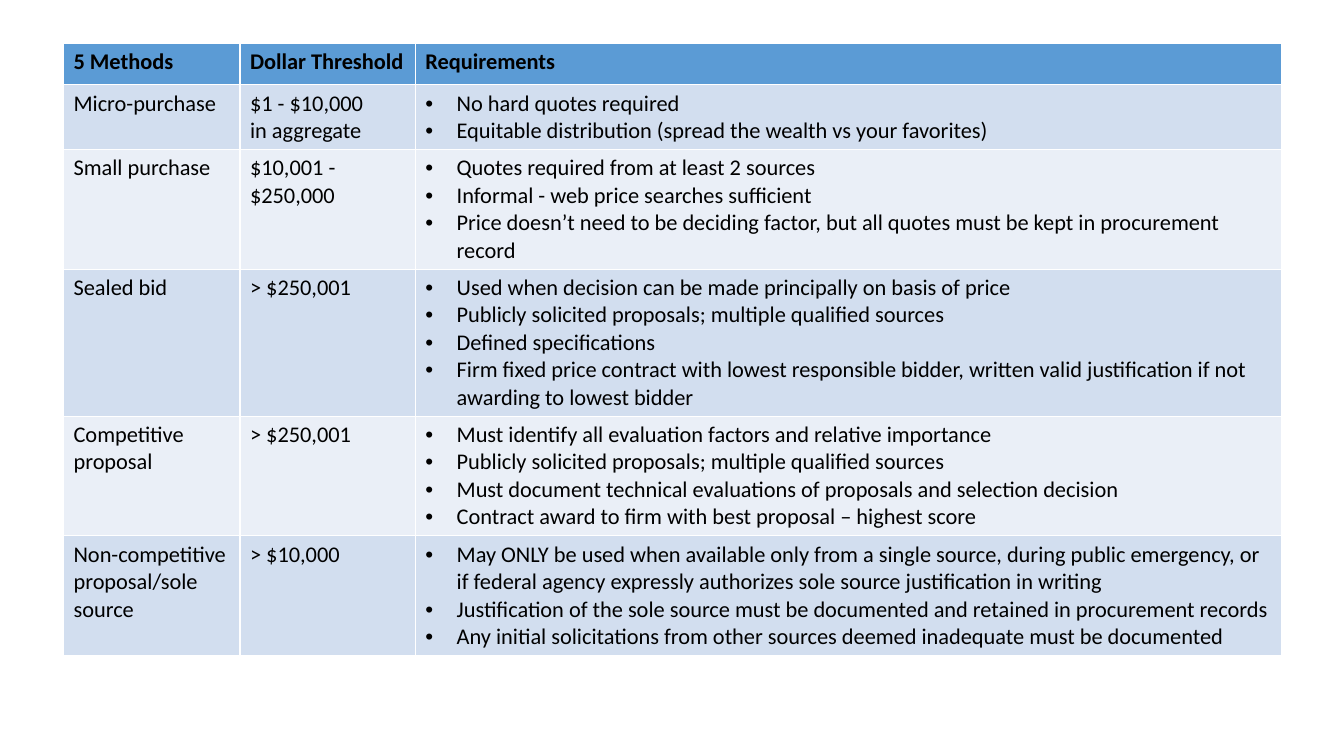
import pptx
import pptx.dml.color
import pptx.oxml
import pptx.util
from lxml import etree

Inches = pptx.util.Inches
RGB = pptx.dml.color.RGBColor

BLUE = RGB(0x5B, 0x9B, 0xD5)
BANDS = RGB(0xD2, 0xDE, 0xEF), RGB(0xEA, 0xEF, 0xF7)
BLACK = RGB(0, 0, 0)

WIDE, HIGH = 13.33, 7.5
LEFT, TOP = 0.63, 0.43
COLS = 1.75, 1.74, 8.59
HEAD = 0.41
LINE, PAD = 0.27, 0.1
HANG = Inches(0.31)

TITLES = "5 Methods", "Dollar Threshold", "Requirements"
METHODS = [
    ("Micro-purchase", ["$1 - $10,000", "in aggregate"], 2, [
        "No hard quotes required",
        "Equitable distribution (spread the wealth vs your favorites)",
    ]),
    ("Small purchase", ["$10,001 -$250,000"], 4, [
        "Quotes required from at least 2 sources",
        "Informal - web price searches sufficient",
        "Price doesn’t need to be deciding factor, but all quotes must be kept "
        "in procurement record",
    ]),
    ("Sealed bid", ["> $250,001"], 5, [
        "Used when decision can be made principally on basis of price",
        "Publicly solicited proposals; multiple qualified sources",
        "Defined specifications",
        "Firm fixed price contract with lowest responsible bidder, written valid "
        "justification if not awarding to lowest bidder",
    ]),
    ("Competitive proposal", ["> $250,001"], 4, [
        "Must identify all evaluation factors and relative importance",
        "Publicly solicited proposals; multiple qualified sources",
        "Must document technical evaluations of proposals and selection decision",
        "Contract award to firm with best proposal – highest score",
    ]),
    ("Non-competitive proposal/sole source", ["> $10,000"], 4, [
        "May ONLY be used when available only from a single source, during public "
        "emergency, or if federal agency expressly authorizes sole source "
        "justification in writing",
        "Justification of the sole source must be documented and retained in "
        "procurement records",
        "Any initial solicitations from other sources deemed inadequate must be "
        "documented",
    ]),
]


def add_dot(para):
    """Give a paragraph a hanging round bullet."""
    props = para._p.get_or_add_pPr()
    props.set("marL", str(HANG))
    props.set("indent", str(-HANG))
    font = etree.SubElement(props, pptx.oxml.ns.qn("a:buFont"))
    font.set("typeface", "Arial")
    dot = etree.SubElement(props, pptx.oxml.ns.qn("a:buChar"))
    dot.set("char", "•")


def fill_cell(cell, lines, fill, bold=False, dots=False):
    """Write one paragraph per line into a coloured cell."""
    cell.fill.solid()
    cell.fill.fore_color.rgb = fill
    cell.text = "\n".join(lines)
    for para in cell.text_frame.paragraphs:
        para.font.name = "Calibri"
        para.font.size = pptx.util.Pt(16)
        para.font.bold = bold
        para.font.color.rgb = BLACK
        if dots:
            add_dot(para)


def add_grid(slide):
    """Place the empty table and size its columns and rows."""
    rows = [HEAD] + [PAD + LINE * count for _, _, count, _ in METHODS]
    frame = slide.shapes.add_table(
        len(rows), len(COLS), Inches(LEFT), Inches(TOP),
        Inches(sum(COLS)), Inches(sum(rows)))
    table = frame.table
    for col, width in zip(table.columns, COLS):
        col.width = Inches(width)
    for row, height in zip(table.rows, rows):
        row.height = Inches(height)
    return table


def main():
    """Build the slide of procurement methods and save it."""
    deck = pptx.Presentation()
    deck.slide_width, deck.slide_height = Inches(WIDE), Inches(HIGH)
    slide = deck.slides.add_slide(deck.slide_layouts[6])
    table = add_grid(slide)
    for col, title in enumerate(TITLES):
        fill_cell(table.cell(0, col), [title], BLUE, bold=True)
    for row, (name, limit, _, rules) in enumerate(METHODS, 1):
        band = BANDS[(row - 1) % 2]
        fill_cell(table.cell(row, 0), [name], band)
        fill_cell(table.cell(row, 1), limit, band)
        fill_cell(table.cell(row, 2), rules, band, dots=True)
    deck.save("out.pptx")


if __name__ == "__main__":
    main()
